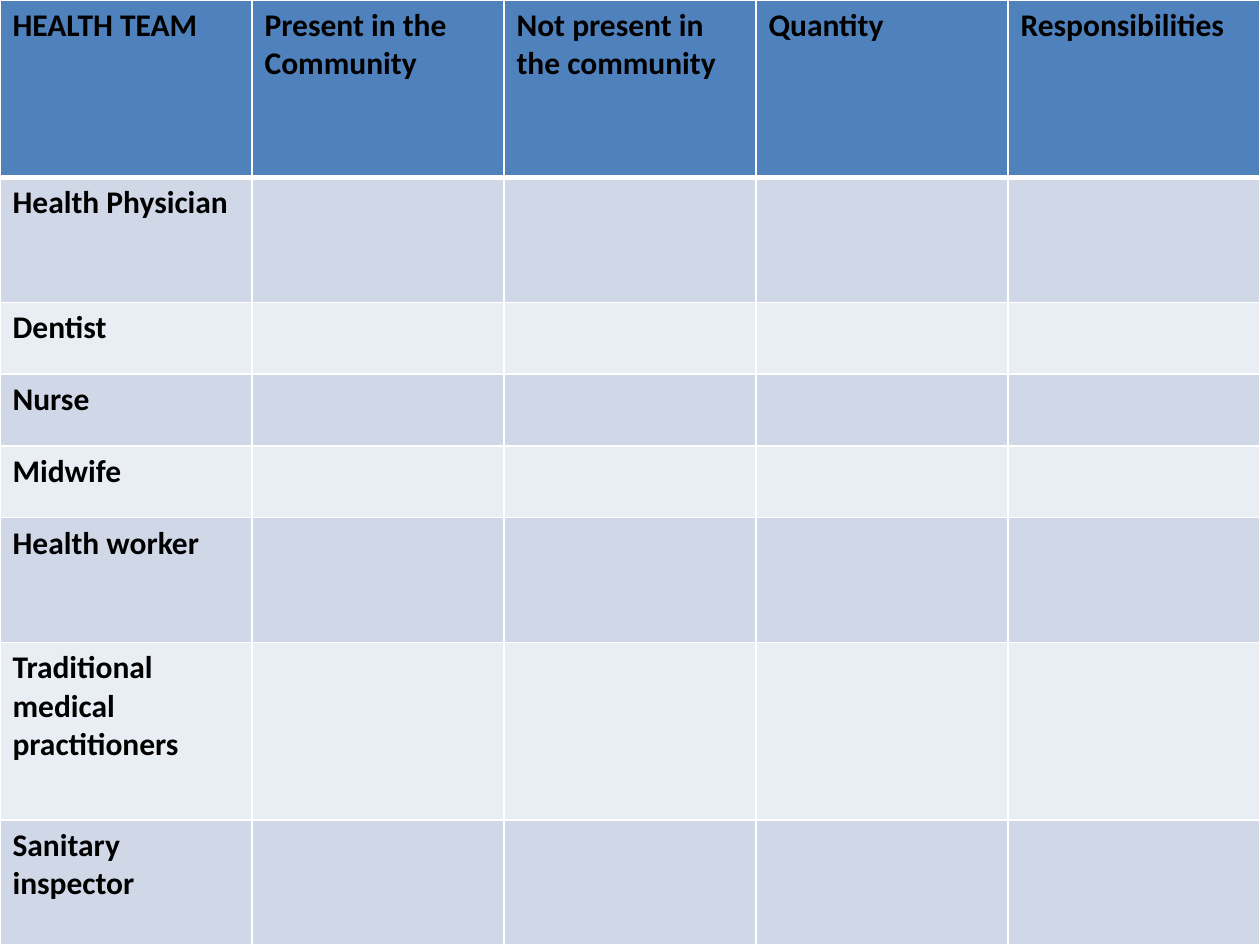
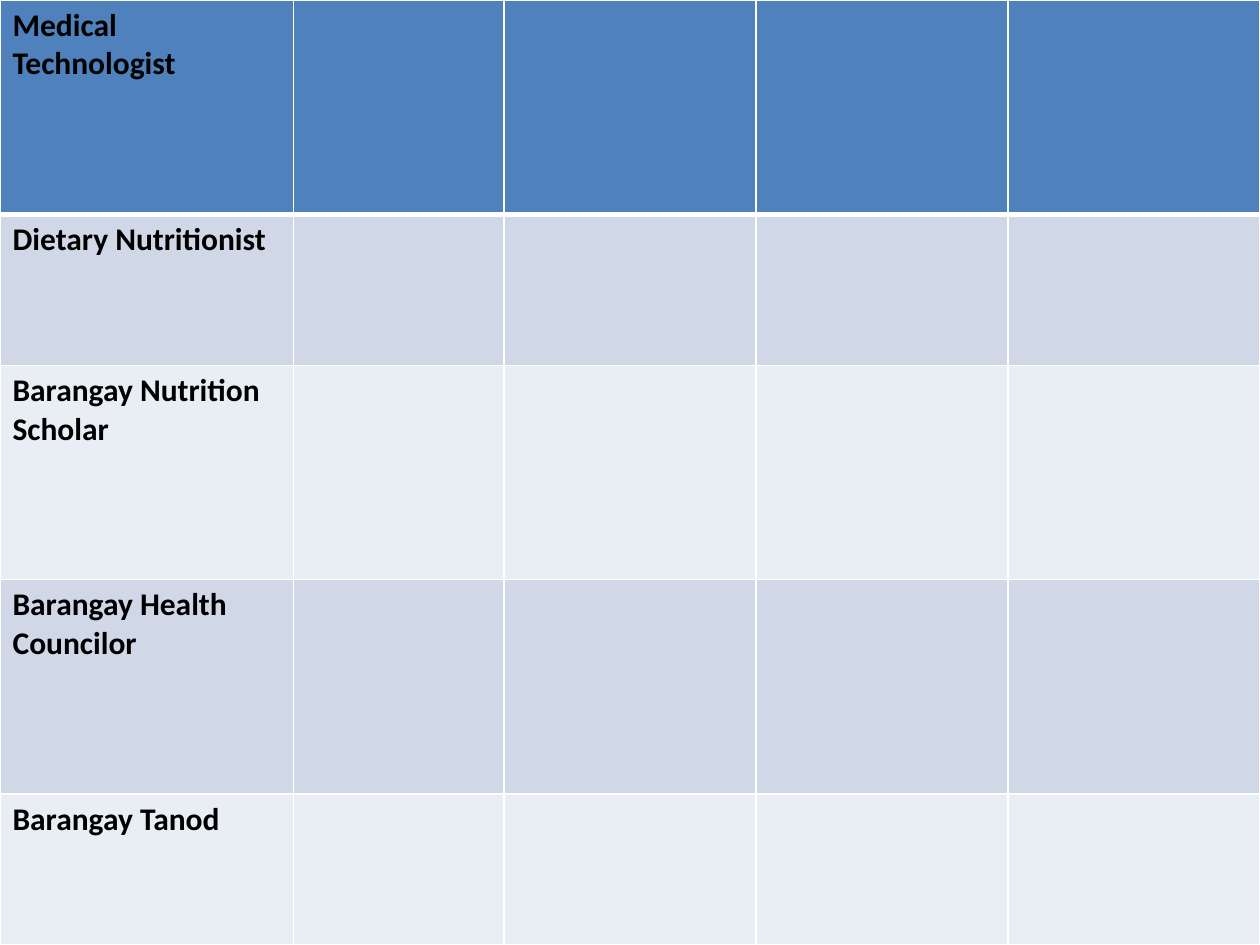
from lxml import etree
from pptx import Presentation
from pptx import util as u
from pptx.dml.color import RGBColor
from pptx.oxml.ns import qn

FONT = "Calibri"
TEXT_SIZE = 18
BLACK = "000000"
WHITE = "FFFFFF"
HEADER_FILL = "4F81BD"
BAND_FILLS = ("D0D8E8", "E9EDF4")
THIN, THICK = 1, 3
BLANK_LAYOUT = 6

TEAM_HEADINGS = [
    "HEALTH TEAM",
    "Present in the Community",
    "Not present in the community",
    "Quantity",
    "Responsibilities",
]
TEAM_ROWS = [
    (1.41, TEAM_HEADINGS),
    (0.99, ["Health Physician"]),
    (0.57, ["Dentist"]),
    (0.57, ["Nurse"]),
    (0.57, ["Midwife"]),
    (0.99, ["Health worker"]),
    (1.41, ["Traditional medical practitioners"]),
    (0.99, ["Sanitary inspector"]),
]
SUPPORT_ROWS = [
    (1.7, ["Medical Technologist"]),
    (1.2, ["Dietary Nutritionist"]),
    (1.7, ["Barangay Nutrition Scholar"]),
    (1.7, ["Barangay Health Councilor"]),
    (1.2, ["Barangay Tanod"]),
]


def color(value):
    return RGBColor.from_string(value)


class DeckBuilder:
    def __init__(self):
        self.deck = Presentation()
        self.deck.slide_width = u.Inches(10)
        self.deck.slide_height = u.Inches(7.5)
        self.page = None

    def add_page(self):
        layout = self.deck.slide_layouts[BLANK_LAYOUT]
        self.page = self.deck.slides.add_slide(layout)

    def border(self, cell, side, points):
        properties = cell._tc.get_or_add_tcPr()
        line = etree.SubElement(properties, qn(f"a:ln{side}"), w=str(u.Pt(points)))
        fill = etree.SubElement(line, qn("a:solidFill"))
        etree.SubElement(fill, qn("a:srgbClr"), val=WHITE)

    def cell(self, cell, words, row):
        for side in "LRTB":
            header_edge = (row, side) in ((0, "B"), (1, "T"))
            self.border(cell, side, THICK if header_edge else THIN)
        cell.fill.solid()
        cell.fill.fore_color.rgb = color(BAND_FILLS[(row - 1) % 2] if row else HEADER_FILL)
        if not words:
            return
        cell.text_frame.text = words
        font = cell.text_frame.paragraphs[0].runs[0].font
        font.name = FONT
        font.size = u.Pt(TEXT_SIZE)
        font.bold = True
        font.color.rgb = color(BLACK)

    def table(self, widths, rows):
        table = self.page.shapes.add_table(
            len(rows), len(widths), 0, 0,
            self.deck.slide_width, self.deck.slide_height,
        ).table
        for column, width in zip(table.columns, widths):
            column.width = u.Inches(width)
        for row, (height, labels) in enumerate(rows):
            table.rows[row].height = u.Inches(height)
            for column in range(len(widths)):
                words = labels[column] if column < len(labels) else ""
                self.cell(table.cell(row, column), words, row)


def main():
    builder = DeckBuilder()
    builder.add_page()
    builder.table([2] * 5, TEAM_ROWS)
    builder.add_page()
    builder.table([2.33, 1.67, 2, 2, 2], SUPPORT_ROWS)
    builder.deck.save("out.pptx")


if __name__ == "__main__":
    main()
